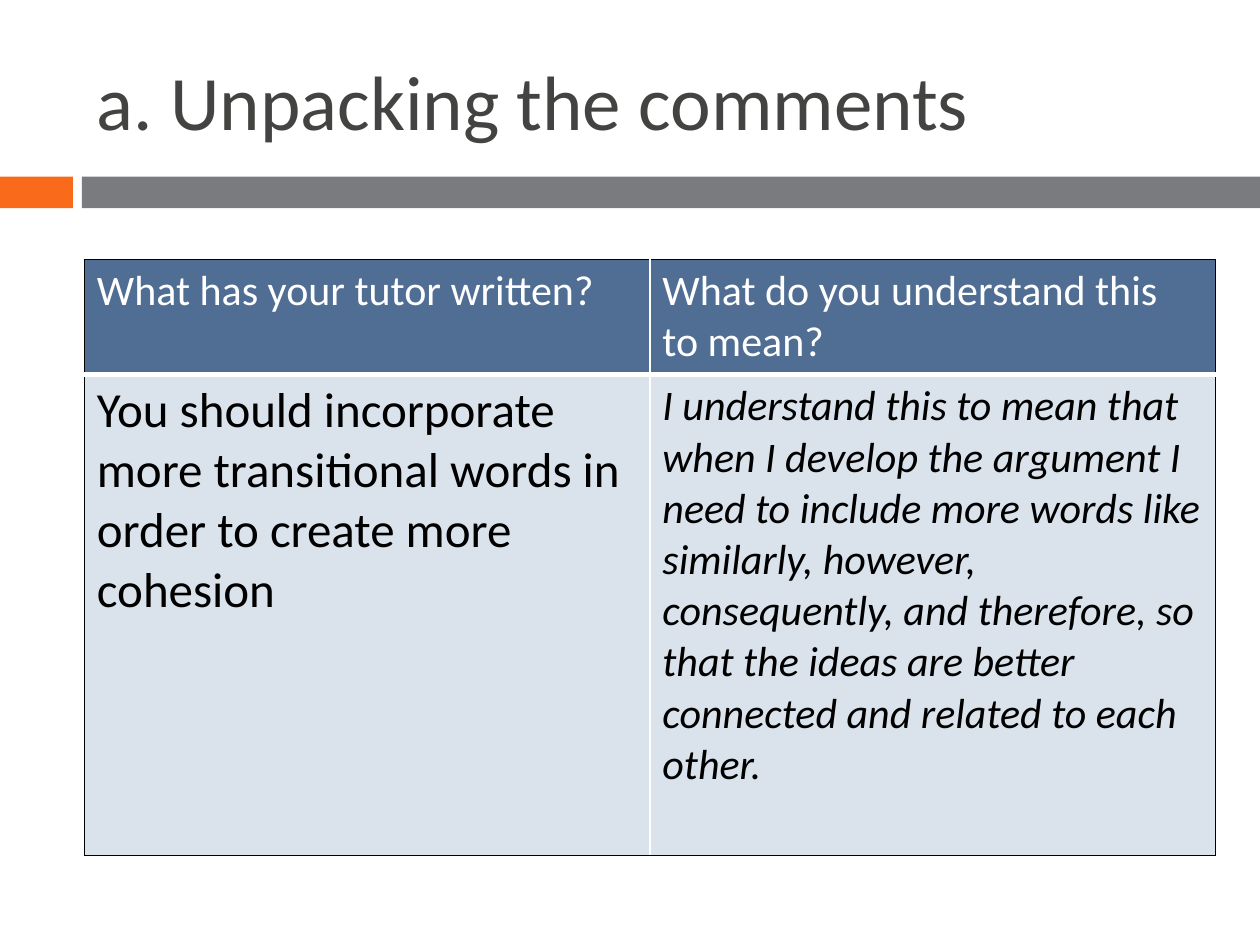
import pptx
import pptx.util
import pptx.dml.color
import pptx.enum.shapes
import pptx.enum.text
import pptx.oxml
import pptx.oxml.ns
from pptx.util import Cm, Pt

THEME = {
    "font": "Calibri",
    "title": ("434342", 44),
    "accent": "F96A1B",
    "bar": "797B7E",
    "head": "506E94",
    "body": "DAE2EB",
    "light": "FFFFFF",
    "dark": "000000",
}
TITLE = "a. Unpacking the comments"
# Each cell: text, size, italic
ROWS = [
    [("What has your tutor written?", 24, False),
     ("What do you understand this to mean?", 24, False)],
    [("You should incorporate more transitional words in order to create "
      "more cohesion", 28, False),
     ("I understand this to mean that when I develop the argument I need to "
      "include more words like similarly, however, consequently, and "
      "therefore, so that the ideas are better connected and related to each "
      "other.", 24, True)],
]
HEIGHTS = [2.31, 9.7]
BANDS = [(0, 1.47, "accent"), (1.65, 23.75, "bar")]  # left, width, colour


def rgb(name):
    return pptx.dml.color.RGBColor.from_string(THEME.get(name, name))


def style(par, color, size, italic=False):
    font = par.font
    font.name, font.size, font.italic = THEME["font"], Pt(size), italic
    font.color.rgb = rgb(color)


def edge(cell, side, color, width):
    """Draw one border; call in the order L, R, T, B, before the fill."""
    ns = pptx.oxml.ns.nsdecls("a")
    cell._tc.get_or_add_tcPr().append(pptx.oxml.parse_xml(
        f'<a:ln{side} {ns} w="{Pt(width)}"><a:solidFill>'
        f'<a:srgbClr val="{THEME[color]}"/></a:solidFill></a:ln{side}>'))


def add_bands(slide):
    for left, width, color in BANDS:
        band = slide.shapes.add_shape(
            pptx.enum.shapes.MSO_SHAPE.RECTANGLE,
            Cm(left), Cm(3.56), Cm(width), Cm(0.64))
        band.shadow.inherit = False
        band.fill.solid()
        band.fill.fore_color.rgb = rgb(color)
        band.line.fill.background()


def add_title(slide):
    title = slide.shapes.title
    title.left, title.top = Cm(1.7), Cm(0.64)
    title.width, title.height = Cm(22.66), Cm(2.74)
    frame = title.text_frame
    frame.text = TITLE
    frame.vertical_anchor = pptx.enum.text.MSO_ANCHOR.MIDDLE
    par = frame.paragraphs[0]
    par.alignment = pptx.enum.text.PP_ALIGN.LEFT
    style(par, *THEME["title"])


def add_grid(slide):
    table = slide.shapes.add_table(
        2, 2, Cm(1.7), Cm(5.23), Cm(22.8), Cm(sum(HEIGHTS))).table
    for r, row in enumerate(ROWS):
        table.rows[r].height = Cm(HEIGHTS[r])
        head = r == 0
        for c, (text, size, italic) in enumerate(row):
            cell = table.cell(r, c)
            cell.text = text
            style(cell.text_frame.paragraphs[0],
                  "light" if head else "dark", size, italic)
            # Outer edges are dark, inner ones light
            edge(cell, "L", "light" if c else "dark", 1)
            edge(cell, "R", "dark" if c else "light", 1)
            edge(cell, "T", "dark" if head else "light", 1 if head else 3)
            edge(cell, "B", "light" if head else "dark", 3 if head else 1)
            cell.fill.solid()
            cell.fill.fore_color.rgb = rgb("head" if head else "body")


def main():
    deck = pptx.Presentation()
    deck.slide_width, deck.slide_height = Cm(25.4), Cm(19.05)
    slide = deck.slides.add_slide(deck.slide_layouts[5])
    add_bands(slide)
    add_title(slide)
    add_grid(slide)
    deck.save("out.pptx")


if __name__ == "__main__":
    main()
